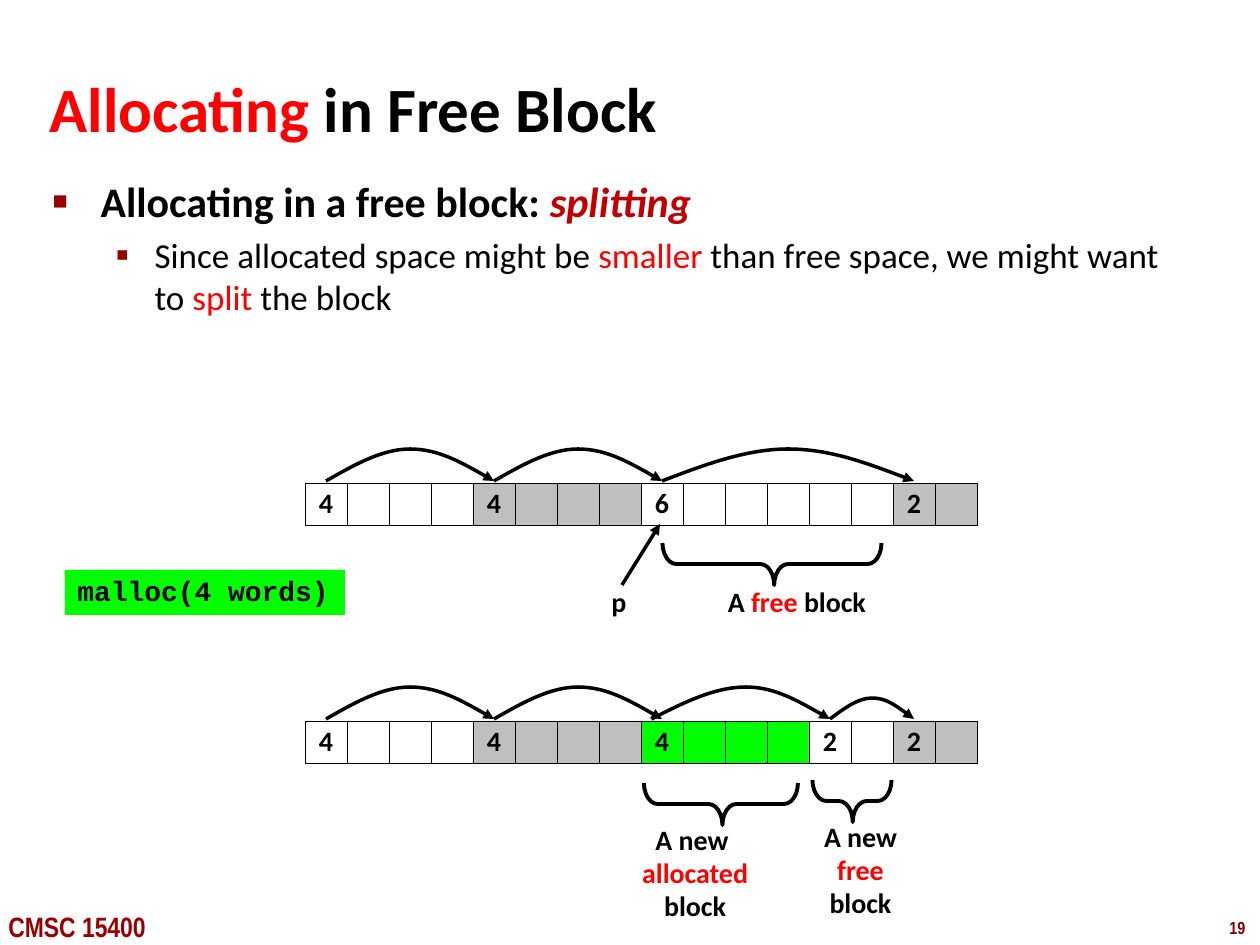
from lxml import etree
from pptx import Presentation
from pptx.dml.color import RGBColor
from pptx.enum.shapes import MSO_CONNECTOR, MSO_SHAPE
from pptx.enum.text import MSO_ANCHOR, MSO_AUTO_SIZE, PP_ALIGN
from pptx.oxml.ns import qn
from pptx.util import Emu, Pt

LEFT, CENTER = PP_ALIGN.LEFT, PP_ALIGN.CENTER
TOP, MIDDLE = MSO_ANCHOR.TOP, MSO_ANCHOR.MIDDLE
RECTANGLE, BRACE = MSO_SHAPE.RECTANGLE, MSO_SHAPE.LEFT_BRACE

BLACK = RGBColor(0x00, 0x00, 0x00)
WHITE = RGBColor(0xFF, 0xFF, 0xFF)
RED = RGBColor(0xFF, 0x00, 0x00)
DARK_RED = RGBColor(0xC0, 0x00, 0x00)
BULLET_RED = RGBColor(0x99, 0x00, 0x00)
MAROON = RGBColor(0x80, 0x00, 0x00)
GRAY = RGBColor(0xBF, 0xBF, 0xBF)
LIGHT_GRAY = RGBColor(0xC0, 0xC0, 0xC0)
GREEN = RGBColor(0x00, 0xFF, 0x00)

SANS, NARROW, MONO = "Calibri", "Arial Narrow", "Courier New"

TITLE = [("Allocating", RED), (" in Free Block", BLACK)]
BULLETS = [
    dict(level=0, size=24, bold=True, margin=48, hang=48, before=0, mark="■", percent=60,
         spans=[("Allocating in a free block: ", BLACK), ("splitting", DARK_RED, True)]),
    dict(level=1, size=20, bold=False, margin=102, hang=39, before=4.5, mark="▪", percent=110,
         spans=[("Since allocated space might be ", BLACK), ("smaller", RED),
                (" than free space, we might want to ", BLACK), ("split", RED),
                (" the block", BLACK)]),
]

# Blocks are (words, fill); arcs are (from cell, to cell, peak cell, height).
HEAPS = [
    dict(top=483, blocks=[(4, WHITE), (4, GRAY), (6, WHITE), (2, LIGHT_GRAY)],
         arcs=[(0, 4, 2, 32), (4, 8, 6, 32), (8, 14, 11, 32)]),
    dict(top=721, blocks=[(4, WHITE), (4, GRAY), (4, GREEN), (2, WHITE), (2, LIGHT_GRAY)],
         arcs=[(0, 4, 2, 32), (4, 8, 6, 32), (7.75, 12, 10, 32), (12, 14, 13, 21)]),
]
BRACES = [(772, 564, 219), (721, 804, 154), (852, 801, 79)]
POINTER = (622, 585, 660, 524)
LABELS = [
    ((599, 580, 40, 46), LEFT, [[("p", BLACK)]]),
    ((714, 580, 166, 46), CENTER, [[("A ", BLACK), ("free", RED), (" block", BLACK)]]),
    ((622, 818, 140, 113), CENTER,
     [[("A new", BLACK)], [(" allocated", RED)], [(" block", BLACK)]]),
    ((810, 815, 101, 113), CENTER,
     [[("A new", BLACK)], [(" free ", RED)], [("block", BLACK)]]),
]
REQUEST = ((65, 570, 280, 45), "malloc(4 words)")
FOOTERS = [
    ((-4, 903, 179, 47), 16, "CMSC 15400", BULLET_RED),
    ((1217, 911, 43, 34), 10, "19", MAROON),
]

CELL, ROW_LEFT, BRACE_DEPTH = 42, 305, 42


def px(value):
    return Emu(round(value * 914400 / 126))


def add_spans(para, spans, size, font=SANS, bold=True):
    for text, color, *italic in spans:
        span = para.add_run()
        span.text = text
        span.font.name = font
        span.font.size = Pt(size)
        span.font.bold = bold
        span.font.italic = bool(italic)
        span.font.color.rgb = color


def write(shape, lines, size=16, font=SANS, align=CENTER, anchor=TOP, spacing=0.98):
    frame = shape.text_frame
    frame.word_wrap = False
    frame.vertical_anchor = anchor
    for index, spans in enumerate(lines):
        para = frame.add_paragraph() if index else frame.paragraphs[0]
        para.alignment = align
        para.line_spacing = spacing
        add_spans(para, spans, size, font)


def place(shape, left, top, width, height):
    shape.left, shape.top = px(left), px(top)
    shape.width, shape.height = px(width), px(height)


def add_text(page, at, lines, **style):
    write(page.shapes.add_textbox(*map(px, at)), lines, **style)


def add_box(page, at, fill, line=None):
    box = page.shapes.add_shape(RECTANGLE, *map(px, at))
    box.shadow.inherit = False
    box.fill.solid()
    box.fill.fore_color.rgb = fill
    if line is None:
        box.line.fill.background()
    else:
        box.line.color.rgb = line
        box.line.width = Pt(0.25)
    return box


def add_arrowhead(shape):
    shape.line.color.rgb = BLACK
    shape.line.width = Pt(2)
    etree.SubElement(shape.line._get_or_add_ln(), qn("a:tailEnd"), type="triangle")


def add_arc(page, start, end, peak, base, height):
    top = base - height
    rise, fall = (peak - start) / 3, (end - peak) / 3
    points = [(start + rise, base - height / 2), (peak - rise, top), (peak, top),
              (peak + fall, top), (end - fall, base - height / 2), (end, base)]
    builder = page.shapes.build_freeform(px(start), px(base))
    builder.add_line_segments([(px(x), px(y)) for x, y in points], close=False)
    arc = builder.convert_to_shape()
    outline = arc._element.find(".//" + qn("a:path"))
    segments = outline.findall(qn("a:lnTo"))
    for first in (0, 3):
        curve = etree.SubElement(outline, qn("a:cubicBezTo"))
        for segment in segments[first:first + 3]:
            curve.append(segment[0])
            outline.remove(segment)
    arc.shadow.inherit = False
    arc.fill.background()
    add_arrowhead(arc)


def add_heap(page, top, blocks, arcs):
    cell = 0
    for words, fill in blocks:
        for offset in range(words):
            box = add_box(page, (ROW_LEFT + cell * CELL, top, CELL, CELL), fill, BLACK)
            if offset == 0:
                write(box, [[(str(words), BLACK)]], anchor=MIDDLE)
            cell += 1
    for *cells, height in arcs:
        start, end, peak = [ROW_LEFT + (index + 0.5) * CELL for index in cells]
        add_arc(page, start, end, peak, top - 2, height)


def add_brace(page, center_x, center_y, span):
    at = (center_x - BRACE_DEPTH / 2, center_y - span / 2, BRACE_DEPTH, span)
    brace = page.shapes.add_shape(BRACE, *map(px, at))
    brace.rotation = 270
    brace.adjustments[0], brace.adjustments[1] = 0.33, 0.51
    brace.shadow.inherit = False
    brace.fill.background()
    brace.line.color.rgb = BLACK
    brace.line.width = Pt(2.25)


def add_bullet(para, item):
    props = para._p.get_or_add_pPr()
    props.set("marL", str(px(item["margin"])))
    props.set("indent", str(-px(item["hang"])))
    color = etree.SubElement(props, qn("a:buClr"))
    etree.SubElement(color, qn("a:srgbClr"), val=str(BULLET_RED))
    etree.SubElement(props, qn("a:buSzPct"), val=str(item["percent"] * 1000))
    etree.SubElement(props, qn("a:buChar"), char=item["mark"])
    para.level = item["level"]
    para.space_before = Pt(item["before"])
    add_spans(para, item["spans"], item["size"], bold=item["bold"])


def main():
    deck = Presentation()
    deck.slide_width, deck.slide_height = px(1260), px(945)
    page = deck.slides.add_slide(deck.slide_layouts[1])

    title, body = page.placeholders
    place(title, 37, 68, 1187, 79)
    place(body, 40, 169, 1145, 719)
    for holder, anchor in ((title, MIDDLE), (body, TOP)):
        holder.text_frame.auto_size = MSO_AUTO_SIZE.NONE
        holder.text_frame.word_wrap = True
        holder.text_frame.vertical_anchor = anchor
    heading = title.text_frame.paragraphs[0]
    heading.alignment = LEFT
    add_spans(heading, TITLE, 36)
    for index, item in enumerate(BULLETS):
        frame = body.text_frame
        add_bullet(frame.add_paragraph() if index else frame.paragraphs[0], item)

    for heap in HEAPS:
        add_heap(page, **heap)
    for brace in BRACES:
        add_brace(page, *brace)
    pointer = page.shapes.add_connector(MSO_CONNECTOR.STRAIGHT, *map(px, POINTER))
    add_arrowhead(pointer)
    etree.SubElement(pointer._element.spPr, qn("a:effectLst"))

    for at, align, lines in LABELS:
        add_text(page, at, lines, align=align)
    at, call = REQUEST
    write(add_box(page, at, GREEN), [[(call, BLACK)]], font=MONO, align=LEFT, spacing=0.94)
    for at, size, text, color in FOOTERS:
        add_text(page, at, [[(text, color)]], size=size, font=NARROW, align=LEFT, spacing=1.0)

    deck.save("out.pptx")


if __name__ == "__main__":
    main()
